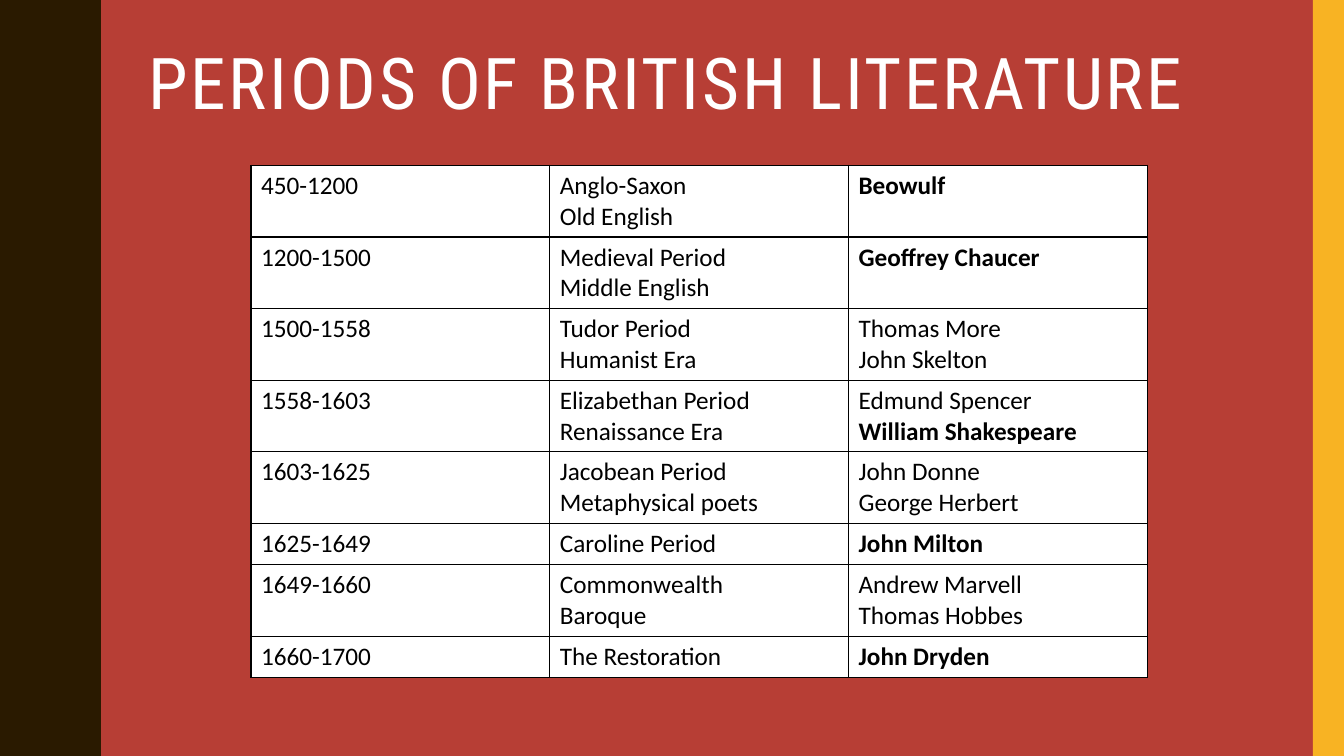
from pptx import Presentation
from pptx.util import Inches, Pt
from pptx.dml.color import RGBColor
from pptx.enum.shapes import MSO_SHAPE as Kind
from pptx.enum.text import MSO_ANCHOR as Anchor, PP_ALIGN as Align, MSO_AUTO_SIZE as Fit
from lxml.etree import SubElement
from pptx.oxml.ns import qn

WIDE, HIGH = 13.33, 7.5


def paint(fill, tint):
    fill.solid()
    fill.fore_color.rgb = RGBColor.from_string(tint)


def write(para, text, face, size, tint, bold=False):
    run = para.add_run()
    run.text = text
    font = run.font
    font.name, font.size, font.bold = face, Pt(size), bold
    font.color.rgb = RGBColor.from_string(tint)
    return run


# Slide and background
deck = Presentation()
deck.slide_width, deck.slide_height = Inches(WIDE), Inches(HIGH)
slide = deck.slides.add_slide(deck.slide_layouts[5])
paint(slide.background.fill, "B73E35")
shapes = slide.shapes

# Wavy left edge: one half wave, mirrored and repeated down the slide
half = [(0.78, 0), (0.78, 0.07), (0.79, 0.14), (0.8, 0.2), (0.81, 0.25),
        (0.83, 0.29), (0.85, 0.33), (0.87, 0.38), (0.89, 0.42), (0.91, 0.46),
        (0.93, 0.5), (0.95, 0.55), (0.96, 0.61), (0.97, 0.68), (0.97, 0.75)]
waves = 5
pitch = HIGH / waves
wave = half + [(x, pitch - y) for x, y in half[-2::-1]]
edge = [(x, y + n * pitch) for n in range(waves) for x, y in wave]
pen = shapes.build_freeform(0, 0, scale=Inches(1))
pen.add_line_segments(edge + [(0, HIGH)], close=True)
band = pen.convert_to_shape()

# Right bar
bar = shapes.add_shape(Kind.RECTANGLE, Inches(13.02), 0, Inches(0.31), Inches(HIGH))
for part, tint in ((band, "2A1A00"), (bar, "F8B323")):
    paint(part.fill, tint)
    part.line.fill.background()
    part.shadow.inherit = False

# Title
title = shapes.title
title.left, title.top = Inches(1.37), Inches(0.42)
title.width, title.height = Inches(11.13), Inches(1.63)
frame = title.text_frame
frame.word_wrap, frame.auto_size = True, Fit.NONE
frame.vertical_anchor = Anchor.TOP
head = frame.paragraphs[0]
head.alignment, head.line_spacing = Align.LEFT, 0.9
run = write(head, "PERIODS OF BRITISH LITERATURE", "Roboto Condensed", 51, "FFFFFF")
run.font._element.set("spc", "200")

# Table of periods: years, names, writers
rows = [
    ("450-1200", "Anglo-Saxon\nOld English", "Beowulf"),
    ("1200-1500", "Medieval Period\nMiddle English", "Geoffrey Chaucer"),
    ("1500-1558", "Tudor Period\nHumanist Era", "Thomas More\nJohn Skelton"),
    ("1558-1603", "Elizabethan Period\nRenaissance Era", "Edmund Spencer\nWilliam Shakespeare"),
    ("1603-1625", "Jacobean Period\nMetaphysical poets", "John Donne\nGeorge Herbert"),
    ("1625-1649", "Caroline Period", "John Milton"),
    ("1649-1660", "Commonwealth\nBaroque", "Andrew Marvell\nThomas Hobbes"),
    ("1660-1700", "The Restoration", "John Dryden"),
]
major = {"Beowulf", "Geoffrey Chaucer", "William Shakespeare", "John Milton", "John Dryden"}
tall = [0.71 if "\n" in row[1] else 0.41 for row in rows]
table = shapes.add_table(len(rows), 3, Inches(2.49), Inches(1.64),
                         Inches(8.89), Inches(sum(tall))).table
table.first_row = table.horz_banding = False
for col in table.columns:
    col.width = Inches(8.89 / 3)

for r, row in enumerate(rows):
    table.rows[r].height = Inches(tall[r])
    for c, text in enumerate(row):
        cell = table.cell(r, c)
        # Borders go before the fill
        props = cell._tc.get_or_add_tcPr()
        for side in ("a:lnL", "a:lnR", "a:lnT", "a:lnB"):
            line = SubElement(props, qn(side), w=str(Pt(1)))
            SubElement(SubElement(line, qn("a:solidFill")), qn("a:srgbClr"), val="000000")
        paint(cell.fill, "FFFFFF")
        frame = cell.text_frame
        for n, name in enumerate(text.split("\n")):
            para = frame.add_paragraph() if n else frame.paragraphs[0]
            write(para, name, "Calibri", 18, "000000", name in major)

deck.save("out.pptx")
